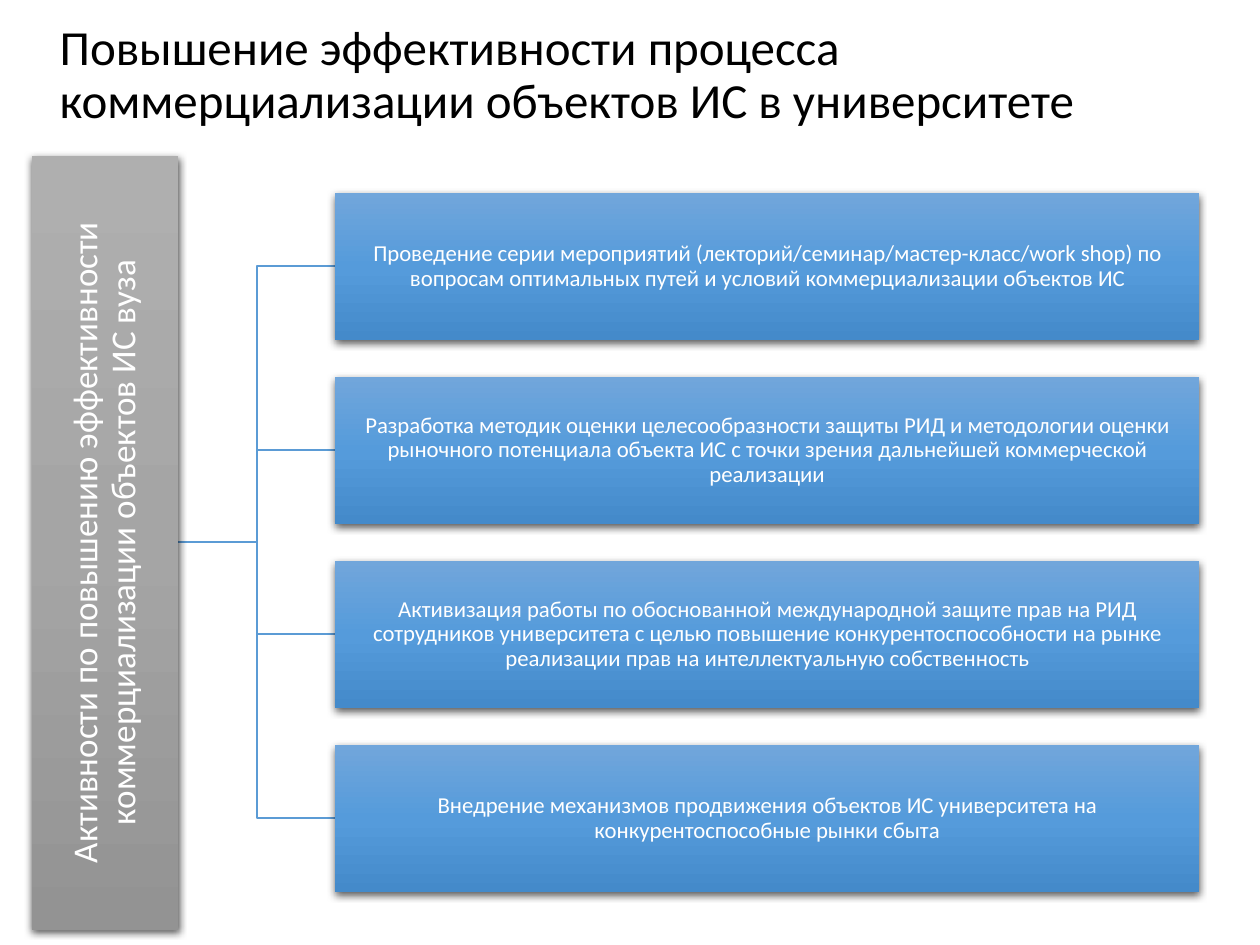
from dataclasses import dataclass

from pptx import Presentation
from pptx.dml.color import RGBColor
from pptx.enum.shapes import MSO_SHAPE
from pptx.enum.text import MSO_ANCHOR, MSO_AUTO_SIZE, PP_ALIGN
from pptx.oxml import parse_xml
from pptx.oxml.ns import nsdecls
from pptx.util import Pt

SCALE = 914400 / 126

BLACK = RGBColor(0x00, 0x00, 0x00)
WHITE = RGBColor(0xFF, 0xFF, 0xFF)
LINE = RGBColor(0x5B, 0x9B, 0xD5)
GREYS = (RGBColor(0xAF, 0xAF, 0xAF), RGBColor(0xA5, 0xA5, 0xA5), RGBColor(0x93, 0x93, 0x93))
BLUES = (RGBColor(0x71, 0xA6, 0xDB), RGBColor(0x55, 0x9B, 0xDB), RGBColor(0x44, 0x8A, 0xCA))

BAR_LENGTH = 774
THICKNESS = 147
BAR_X, BAR_Y = 105, 542
BAR_RIGHT = 178
BOX_LEFT, BOX_TOP, BOX_WIDTH = 335, 193, 864
BOX_PITCH = 184

ROOT = "Активности по повышению эффективности коммерциализации объектов ИС вуза"
ACTIVITIES = (
    "Проведение серии мероприятий (лекторий/семинар/мастер-класс/work shop) по вопросам "
    "оптимальных путей и условий коммерциализации объектов ИС",
    "Разработка методик оценки целесообразности защиты РИД и методологии оценки рыночного "
    "потенциала объекта ИС с точки зрения дальнейшей коммерческой реализации",
    "Активизация работы по обоснованной международной защите прав на РИД сотрудников "
    "университета с целью повышение конкурентоспособности на рынке реализации прав на "
    "интеллектуальную собственность",
    "Внедрение механизмов продвижения объектов ИС университета на конкурентоспособные "
    "рынки сбыта",
)


@dataclass(frozen=True)
class Box:
    text: str
    left: int
    top: int
    width: int
    height: int
    size: int
    colors: tuple
    rotation: int = 0


def px(n: float) -> int:
    return round(n * SCALE)


def set_text(tf, text: str, size: int, color: RGBColor, align) -> None:
    tf.text = text
    tf.word_wrap = True
    tf.auto_size = MSO_AUTO_SIZE.NONE
    tf.vertical_anchor = MSO_ANCHOR.MIDDLE
    p = tf.paragraphs[0]
    p.alignment = align
    p.line_spacing = 0.9
    r = p.runs[0]
    r.font.name = "Calibri"
    r.font.size = Pt(size)
    r.font.color.rgb = color


def add_gradient(sp, colors: tuple) -> None:
    stops = "".join(
        f'<a:gs pos="{i * 50000}"><a:srgbClr val="{c}"/></a:gs>' for i, c in enumerate(colors)
    )
    sp.line._get_or_add_ln().addprevious(parse_xml(
        f'<a:gradFill {nsdecls("a")} rotWithShape="0"><a:gsLst>{stops}</a:gsLst>'
        '<a:lin ang="5400000" scaled="0"/></a:gradFill>'
    ))


def add_shadow(sp) -> None:
    sp.shadow.inherit = False
    sp._element.spPr.effectLst.append(parse_xml(
        f'<a:outerShdw {nsdecls("a")} blurRad="57150" dist="19050" dir="5400000" '
        'algn="ctr" rotWithShape="0"><a:srgbClr val="000000"><a:alpha val="63000"/>'
        '</a:srgbClr></a:outerShdw>'
    ))


def add_box(s, box: Box) -> None:
    sp = s.shapes.add_shape(
        MSO_SHAPE.RECTANGLE, px(box.left), px(box.top), px(box.width), px(box.height)
    )
    sp.rotation = box.rotation
    sp.line.fill.background()
    add_gradient(sp, box.colors)
    add_shadow(sp)
    tf = sp.text_frame
    tf.margin_left = tf.margin_right = tf.margin_top = tf.margin_bottom = px(1)
    set_text(tf, box.text, box.size, WHITE, PP_ALIGN.CENTER)


def add_branch(s, y: int) -> None:
    middle = (BAR_RIGHT + BOX_LEFT + 1) // 2
    builder = s.shapes.build_freeform(BAR_RIGHT, BAR_Y, scale=SCALE)
    builder.add_line_segments([(middle, BAR_Y), (middle, y), (BOX_LEFT, y)], close=False)
    sp = builder.convert_to_shape()
    sp.fill.background()
    sp.line.color.rgb = LINE
    sp.line.width = Pt(1)
    sp.shadow.inherit = False


def main() -> None:
    prs = Presentation()
    prs.slide_width, prs.slide_height = px(1260), px(945)
    s = prs.slides.add_slide(prs.slide_layouts[5])

    title = s.shapes.title
    title.left, title.top, title.width, title.height = px(47), px(18), px(1167), px(116)
    set_text(
        title.text_frame,
        "Повышение эффективности процесса коммерциализации объектов ИС в университете",
        28, BLACK, PP_ALIGN.LEFT,
    )

    tops = [BOX_TOP + i * BOX_PITCH for i in range(len(ACTIVITIES))]
    for top in reversed(tops):
        add_branch(s, top + THICKNESS // 2)

    add_box(s, Box(
        ROOT, BAR_X - BAR_LENGTH // 2, BAR_Y - THICKNESS // 2,
        BAR_LENGTH, THICKNESS, 20, GREYS, 270,
    ))
    for text, top in zip(ACTIVITIES, tops):
        add_box(s, Box(text, BOX_LEFT, top, BOX_WIDTH, THICKNESS, 13, BLUES))

    prs.save("out.pptx")


if __name__ == "__main__":
    main()
